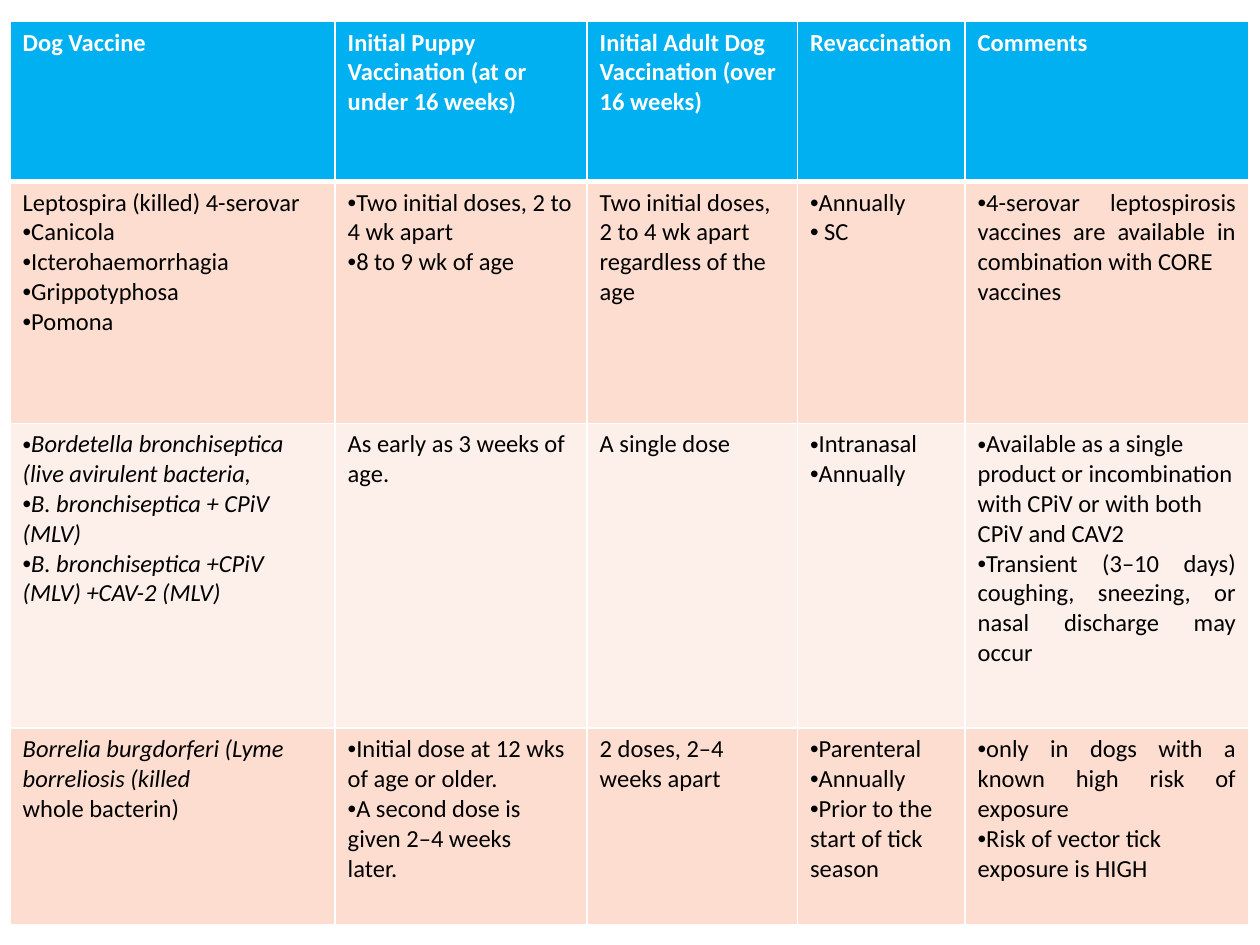
"""Build a slide with a table of dog vaccines and their schedules."""
from lxml import etree
from pptx import Presentation
from pptx.dml.color import RGBColor
from pptx.enum.text import PP_ALIGN
from pptx.oxml.ns import qn
from pptx.util import Inches, Pt

JUSTIFY = PP_ALIGN.JUSTIFY
LEFT = PP_ALIGN.LEFT
FONT = "Calibri"
FONT_SIZE = 14
COLORS = {"header": "00B0F0", "odd": "FCDDCF", "even": "FDEFE9",
          "border": "FFFFFF", "header_text": "FFFFFF", "text": "000000"}
TABLE_LEFT, TABLE_TOP = 0.08, 0.17
COLUMN_WIDTHS = [2.58, 2, 1.67, 1.33, 2.25]
ROW_HEIGHTS = [1.27, 1.92, 2.42, 1.56]
THIN, THICK = 1, 3


def plain(text, italic=False):
    return {"text": text, "bullet": False, "italic": italic, "align": LEFT}


def bullet(text, italic=False, align=LEFT):
    return {"text": text, "bullet": True, "italic": italic, "align": align}


HEADERS = [
    "Dog Vaccine",
    "Initial Puppy Vaccination (at or under 16 weeks)",
    "Initial Adult Dog Vaccination (over 16 weeks)",
    "Revaccination",
    "Comments",
]
ROWS = [
    [
        [plain("Leptospira (killed) 4-serovar"), bullet("Canicola"),
         bullet("Icterohaemorrhagia"), bullet("Grippotyphosa"), bullet("Pomona")],
        [bullet("Two initial doses, 2 to 4 wk apart"), bullet("8 to 9 wk of age")],
        [plain("Two initial doses, 2 to 4 wk apart regardless of the age")],
        [bullet("Annually"), bullet(" SC")],
        [bullet("4-serovar leptospirosis vaccines are available in "
                "combination with CORE", align=JUSTIFY),
         plain("vaccines")],
    ],
    [
        [bullet("Bordetella bronchiseptica (live avirulent bacteria,", italic=True),
         bullet("B. bronchiseptica + CPiV (MLV)", italic=True),
         bullet("B. bronchiseptica +CPiV (MLV) +CAV-2 (MLV)", italic=True)],
        [plain("As early as 3 weeks of age.")],
        [plain("A single dose")],
        [bullet("Intranasal"), bullet("Annually")],
        [bullet("Available as a single", align=JUSTIFY),
         plain("product or incombination with CPiV or with both"),
         plain("CPiV and CAV2"),
         bullet("Transient (3–10 days) coughing, sneezing, or nasal "
                "discharge may occur", align=JUSTIFY)],
    ],
    [
        [plain("Borrelia burgdorferi (Lyme borreliosis (killed", italic=True),
         plain("whole bacterin)")],
        [bullet("Initial dose at 12 wks"), plain("of age or older."),
         bullet("A second dose is given 2–4 weeks"), plain("later.")],
        [plain("2 doses, 2–4 weeks apart")],
        [bullet("Parenteral"), bullet("Annually"),
         bullet("Prior to the start of tick season")],
        [bullet("only in dogs with a known high risk of exposure", align=JUSTIFY),
         bullet("Risk of vector tick"), plain("exposure is HIGH")],
    ],
]


def set_borders(cell, top, bottom):
    properties = cell._tc.get_or_add_tcPr()
    for side, width in (("L", THIN), ("R", THIN), ("T", top), ("B", bottom)):
        line = etree.SubElement(properties, qn(f"a:ln{side}"), w=str(Pt(width)))
        fill = etree.SubElement(line, qn("a:solidFill"))
        etree.SubElement(fill, qn("a:srgbClr"), val=COLORS["border"])


def write_paragraph(paragraph, item, color, bold):
    paragraph.text = item["text"]
    paragraph.alignment = item["align"]
    properties = paragraph._p.get_or_add_pPr()
    if item["bullet"]:
        etree.SubElement(properties, qn("a:buFont"), typeface="Arial")
        etree.SubElement(properties, qn("a:buChar"), char="•")
    else:
        etree.SubElement(properties, qn("a:buNone"))
    font = paragraph.runs[0].font
    font.name = FONT
    font.size = Pt(FONT_SIZE)
    font.bold = bold
    font.italic = item["italic"]
    font.color.rgb = RGBColor.from_string(color)


def fill_cell(cell, items, row_index):
    is_header = row_index == 0
    set_borders(cell, THICK if row_index == 1 else THIN,
                THICK if is_header else THIN)
    fill_name = "header" if is_header else ("even", "odd")[row_index % 2]
    cell.fill.solid()
    cell.fill.fore_color.rgb = RGBColor.from_string(COLORS[fill_name])
    color = COLORS["header_text" if is_header else "text"]
    text_frame = cell.text_frame
    for index, item in enumerate(items):
        paragraph = text_frame.add_paragraph() if index else text_frame.paragraphs[0]
        write_paragraph(paragraph, item, color, is_header)


def main():
    presentation = Presentation()
    presentation.slide_width = Inches(10)
    presentation.slide_height = Inches(7.5)
    slide = presentation.slides.add_slide(presentation.slide_layouts[6])
    table = slide.shapes.add_table(
        len(ROW_HEIGHTS), len(COLUMN_WIDTHS), Inches(TABLE_LEFT), Inches(TABLE_TOP),
        Inches(sum(COLUMN_WIDTHS)), Inches(sum(ROW_HEIGHTS))).table
    for column, width in zip(table.columns, COLUMN_WIDTHS):
        column.width = Inches(width)
    for row, height in zip(table.rows, ROW_HEIGHTS):
        row.height = Inches(height)
    content = [[[plain(header)] for header in HEADERS]] + ROWS
    for row_index, cells in enumerate(content):
        for column_index, items in enumerate(cells):
            fill_cell(table.cell(row_index, column_index), items, row_index)
    presentation.save("out.pptx")


if __name__ == "__main__":
    main()
